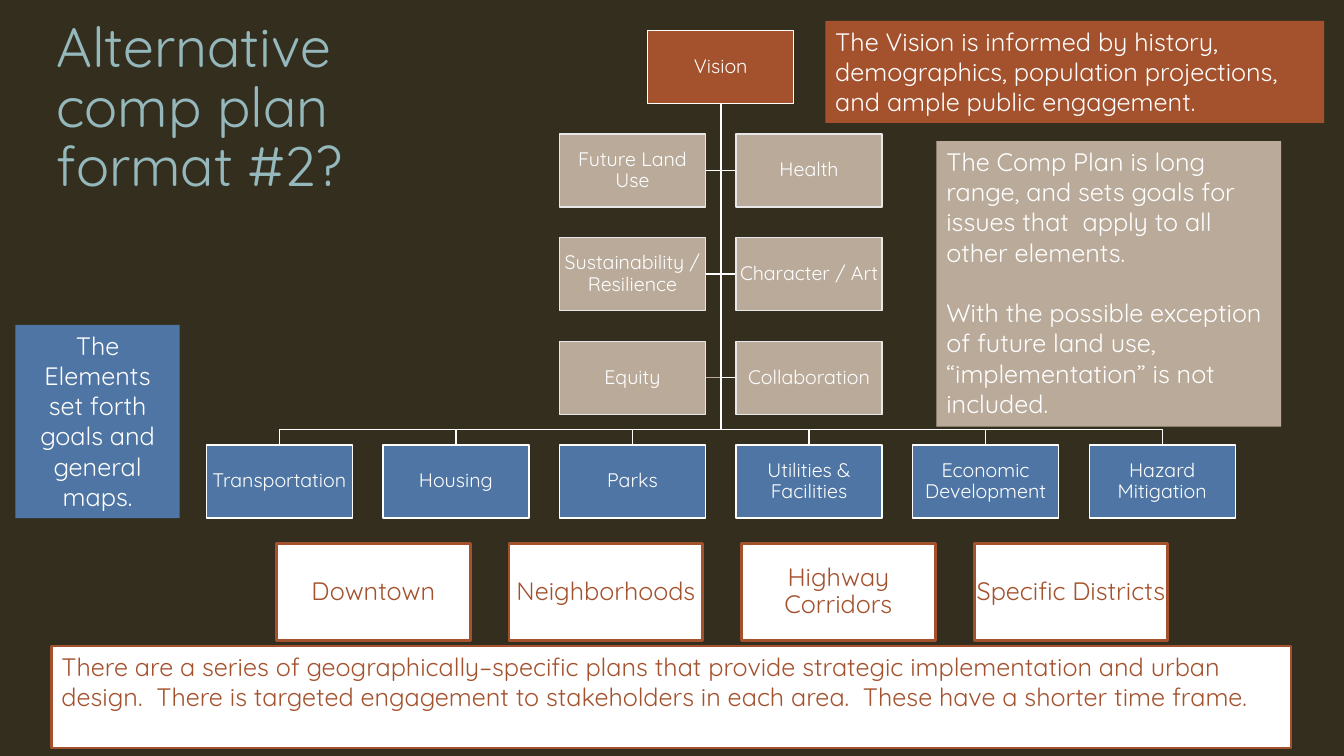
from dataclasses import dataclass

from pptx import Presentation
from pptx.dml.color import RGBColor
from pptx.enum.shapes import MSO_SHAPE
from pptx.enum.text import MSO_ANCHOR, PP_ALIGN
from pptx.slide import Slide
from pptx.text.text import TextFrame
from pptx.util import Cm, Pt

RECT = MSO_SHAPE.RECTANGLE
TOP, MIDDLE = MSO_ANCHOR.TOP, MSO_ANCHOR.MIDDLE
LEFT, CENTER = PP_ALIGN.LEFT, PP_ALIGN.CENTER

FONT = "Quicksand"
DARK, WHITE, PALE = "342E1F", "FFFFFF", "E7E7E7"
RUST, SAND, BLUE, TEAL = "A4522E", "B9AA9A", "4E75A3", "94B8BB"

WIDE, HIGH, GAP = 3.68, 1.84, 0.77
COL, ROW = WIDE + GAP, HIGH + GAP
EDGE, HEAD = 5.2, 0.77
TRUNK = EDGE + 2.5 * COL + WIDE / 2
START = HEAD + HIGH

TOPICS = [
    ("Future Land Use", "Health"),
    ("Sustainability / Resilience", "Character / Art"),
    ("Equity", "Collaboration"),
]
PARTS = ["Transportation", "Housing", "Parks", "Utilities & Facilities",
         "Economic Development", "Hazard Mitigation"]
PLACES = ["Downtown", "Neighborhoods", "Highway Corridors", "Specific Districts"]


@dataclass
class Box:
    """A filled rectangle with text, measured in centimetres."""
    text: str
    left: float
    top: float
    width: float = WIDE
    height: float = HIGH
    fill: str = BLUE
    line: str = ""
    weight: float = 1
    ink: str = WHITE
    size: float = 14
    align: PP_ALIGN = CENTER
    tight: bool = True


NOTES = [
    Box("The Comp Plan is long range, and sets goals for issues that  apply to all "
        "other elements.\nWith the possible exception of future land use, "
        "“implementation” is not included.",
        23.6, 3.56, 8.69, 7.19, SAND, size=18, align=LEFT, tight=False),
    Box("The Elements set forth goals and general maps.",
        0.39, 8.19, 4.14, 4.87, BLUE, size=18, tight=False),
    Box("The Vision is informed by history, demographics, population projections, "
        "and ample public engagement.",
        20.8, 0.53, 12.57, 2.57, RUST, size=18, align=LEFT, tight=False),
    Box("There are a series of geographically–specific plans that provide strategic "
        "implementation and urban design.  There is targeted engagement to "
        "stakeholders in each area.  These have a shorter time frame.",
        1.3, 16.28, 31.24, 2.57, WHITE, RUST, 1.5, RUST, 18, LEFT, False),
]


def tint(code: str) -> RGBColor:
    """Turn a hex string into a colour."""
    return RGBColor.from_string(code)


def write(frame: TextFrame, text: str, size: float, ink: str,
          align: PP_ALIGN, spread: float) -> None:
    """Fill a text frame, one paragraph to a line of text."""
    frame.word_wrap = True
    frame.text = text
    for i, para in enumerate(frame.paragraphs):
        para.alignment = align
        para.line_spacing = spread
        para.space_before = Pt(21.6 if i else 0)
        para.font.name = FONT
        para.font.size = Pt(size)
        para.font.color.rgb = tint(ink)


def draw(slide: Slide, box: Box) -> None:
    """Draw one box with its text."""
    shape = slide.shapes.add_shape(
        RECT, Cm(box.left), Cm(box.top), Cm(box.width), Cm(box.height))
    shape.shadow.inherit = False
    shape.fill.solid()
    shape.fill.fore_color.rgb = tint(box.fill)
    if box.line:
        shape.line.color.rgb = tint(box.line)
        shape.line.width = Pt(box.weight)
    else:
        shape.line.fill.background()
    frame = shape.text_frame
    frame.vertical_anchor = MIDDLE if box.tight else TOP
    if box.tight:
        frame.margin_left = frame.margin_right = Cm(0.03)
        frame.margin_top = frame.margin_bottom = Cm(0.03)
    write(frame, box.text, box.size, box.ink, box.align, 0.9 if box.tight else 1)


def link(slide: Slide, stops: list[tuple[float, float]], color: str = WHITE) -> None:
    """Draw a bent line from the foot of the Vision box through the stops."""
    pen = slide.shapes.build_freeform(Cm(TRUNK), Cm(START))
    pen.add_line_segments([(Cm(x), Cm(y)) for x, y in stops], close=False)
    shape = pen.convert_to_shape()
    shape.shadow.inherit = False
    shape.fill.background()
    shape.line.color.rgb = tint(color)
    shape.line.width = Pt(1)


def chart(slide: Slide) -> None:
    """Draw the tree of vision, topics and elements."""
    boxes = [Box("Vision", EDGE + 2.5 * COL, HEAD, fill=RUST, line=WHITE)]
    base = HEAD + 4 * ROW
    for i, part in enumerate(PARTS):
        left = EDGE + i * COL
        mid = left + WIDE / 2
        bus = base - GAP / 2
        link(slide, [(TRUNK, bus), (mid, bus), (mid, base)])
        boxes.append(Box(part, left, base, line=WHITE))
    for i, pair in enumerate(TOPICS, 1):
        top = HEAD + i * ROW
        mid = top + HIGH / 2
        for j, topic in enumerate(pair):
            end = TRUNK + (j - 0.5) * GAP
            link(slide, [(TRUNK, mid), (end, mid)], SAND if topic == "Equity" else WHITE)
            boxes.append(Box(topic, EDGE + (2 + j) * COL, top, fill=SAND, line=PALE))
    link(slide, [(TRUNK, base - GAP / 2)])
    for box in boxes:
        draw(slide, box)


def main() -> None:
    """Build the slide and save it."""
    deck = Presentation()
    deck.slide_width, deck.slide_height = Cm(33.87), Cm(19.05)
    slide = deck.slides.add_slide(deck.slide_layouts[5])
    slide.background.fill.solid()
    slide.background.fill.fore_color.rgb = tint(DARK)

    title = slide.shapes.title
    title.left, title.top = Cm(1.17), Cm(0.91)
    title.width, title.height = Cm(10.41), Cm(3.68)
    title.text_frame.vertical_anchor = MIDDLE
    write(title.text_frame, "Alternative comp plan format #2?", 39.6, TEAL, LEFT, 0.9)

    chart(slide)
    for note in NOTES:
        draw(slide, note)
    for i, place in enumerate(PLACES):
        draw(slide, Box(place, 6.97 + i * 5.86, 13.7, 4.88, 2.44, WHITE, RUST, 2, RUST, 18))
    deck.save("out.pptx")


if __name__ == "__main__":
    main()
